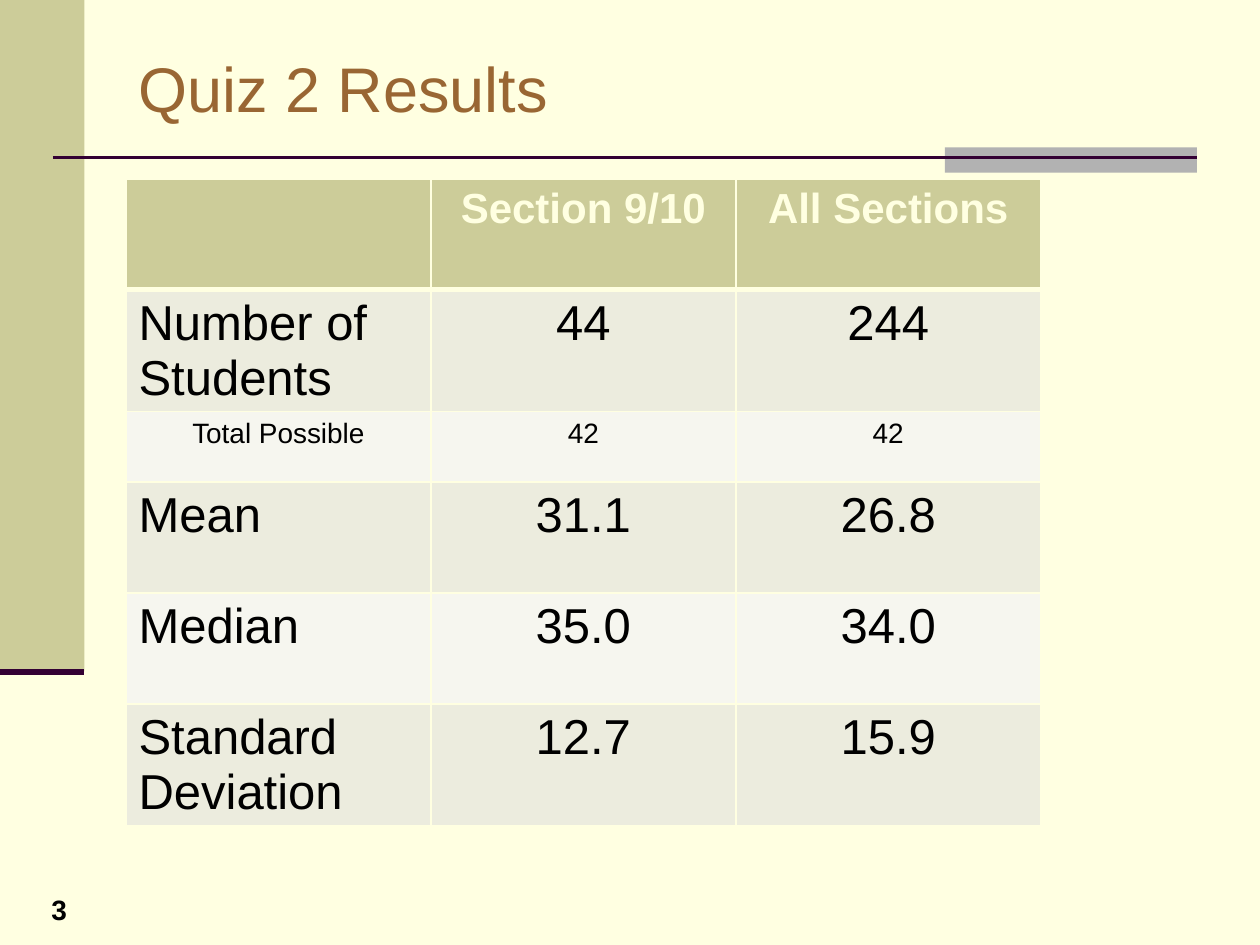
"""Build the Quiz 2 results slide with its statistics table."""
from lxml.etree import SubElement
from pptx import Presentation
from pptx.dml.color import RGBColor
from pptx.enum.shapes import MSO_CONNECTOR as Connector, MSO_SHAPE as Shape
from pptx.enum.text import MSO_ANCHOR as Anchor, PP_ALIGN as Align
from pptx.oxml.ns import qn
from pptx.util import Inches, Pt

CREAM = RGBColor(0xFF, 0xFF, 0xE1)
KHAKI = RGBColor(0xCC, 0xCC, 0x99)
GRAY = RGBColor(0xB2, 0xB2, 0xB2)
PLUM = RGBColor(0x33, 0x00, 0x33)
BROWN = RGBColor(0x99, 0x66, 0x33)
BLACK = RGBColor(0, 0, 0)
BANDS = (RGBColor(0xEC, 0xEC, 0xDE), RGBColor(0xF6, 0xF6, 0xEF))

TITLE = "Quiz 2 Results"
PAGE_NUMBER = "3"
HEADER = ("", "Section 9/10", "All Sections")
TOTAL = "Total Possible"
RESULTS = [
    ("Number of Students", "44", "244"),
    (TOTAL, "42", "42"),
    ("Mean", "31.1", "26.8"),
    ("Median", "35.0", "34.0"),
    ("Standard Deviation", "12.7", "15.9"),
]
COLUMN_WIDTH, ROW_HEIGHT, TOTAL_HEIGHT = 2.42, 0.88, 0.56
BLOCKS = [((0, 0, 0.67, 5.33), KHAKI), ((7.5, 1.17, 2, 0.2), GRAY)]
RULES = [((0.42, 1.25, 9.5, 1.25), 1.5), ((0, 5.33, 0.67, 5.33), 3.5)]


def write(frame, text, size, color, align=Align.LEFT, bold=False):
    frame.text = text
    paragraph = frame.paragraphs[0]
    paragraph.alignment = align
    for run in paragraph.runs:
        run.font.name = "Arial"
        run.font.size = Pt(size)
        run.font.bold = bold
        run.font.color.rgb = color


def add_label(slide, box, text, size, color, **style):
    frame = slide.shapes.add_textbox(*map(Inches, box)).text_frame
    frame.word_wrap = True
    frame.vertical_anchor = Anchor.MIDDLE
    write(frame, text, size, color, **style)


def set_borders(cell, bottom):
    properties = cell._tc.get_or_add_tcPr()
    for position, (side, width) in enumerate(zip("LRTB", (1, 1, 1, bottom))):
        line = SubElement(properties, qn(f"a:ln{side}"), w=str(Pt(width)))
        fill = SubElement(line, qn("a:solidFill"))
        SubElement(fill, qn("a:srgbClr"), val=str(CREAM))
        properties.insert(position, line)


def add_decoration(slide):
    for box, color in BLOCKS:
        block = slide.shapes.add_shape(Shape.RECTANGLE, *map(Inches, box))
        block.shadow.inherit = False
        block.fill.solid()
        block.fill.fore_color.rgb = color
        block.line.fill.background()
    for ends, width in RULES:
        rule = slide.shapes.add_connector(Connector.STRAIGHT, *map(Inches, ends))
        rule.line.color.rgb = PLUM
        rule.line.width = Pt(width)
        SubElement(rule._element.spPr, qn("a:effectLst"))


def add_results(slide):
    rows = [HEADER, *RESULTS]
    heights = [TOTAL_HEIGHT if row[0] == TOTAL else ROW_HEIGHT for row in rows]
    size = (COLUMN_WIDTH * len(HEADER), sum(heights))
    table = slide.shapes.add_table(
        len(rows), len(HEADER), Inches(1), Inches(1.42), *map(Inches, size)
    ).table
    for column in table.columns:
        column.width = Inches(COLUMN_WIDTH)
    for r, (values, height) in enumerate(zip(rows, heights)):
        table.rows[r].height = Inches(height)
        is_header, is_total = r == 0, values[0] == TOTAL
        text_size = 24 if is_header else 16 if is_total else 28
        for c, value in enumerate(values):
            cell = table.cell(r, c)
            cell.fill.solid()
            cell.fill.fore_color.rgb = KHAKI if is_header else BANDS[(r - 1) % 2]
            set_borders(cell, 3 if is_header else 1)
            centred = c > 0 or is_total
            write(cell.text_frame, value, text_size,
                  CREAM if is_header else BLACK,
                  Align.CENTER if centred else Align.LEFT, is_header)


def main():
    deck = Presentation()
    deck.slide_width, deck.slide_height = Inches(10), Inches(7.5)
    slide = deck.slides.add_slide(deck.slide_layouts[6])
    slide.background.fill.solid()
    slide.background.fill.fore_color.rgb = CREAM
    add_decoration(slide)
    add_results(slide)
    add_label(slide, (0.15, 7.02, 0.64, 0.4), PAGE_NUMBER, 16, BLACK,
              align=Align.CENTER, bold=True)
    add_label(slide, (1, 0.3, 8.5, 0.78), TITLE, 36, BROWN)
    deck.save("out.pptx")


if __name__ == "__main__":
    main()
